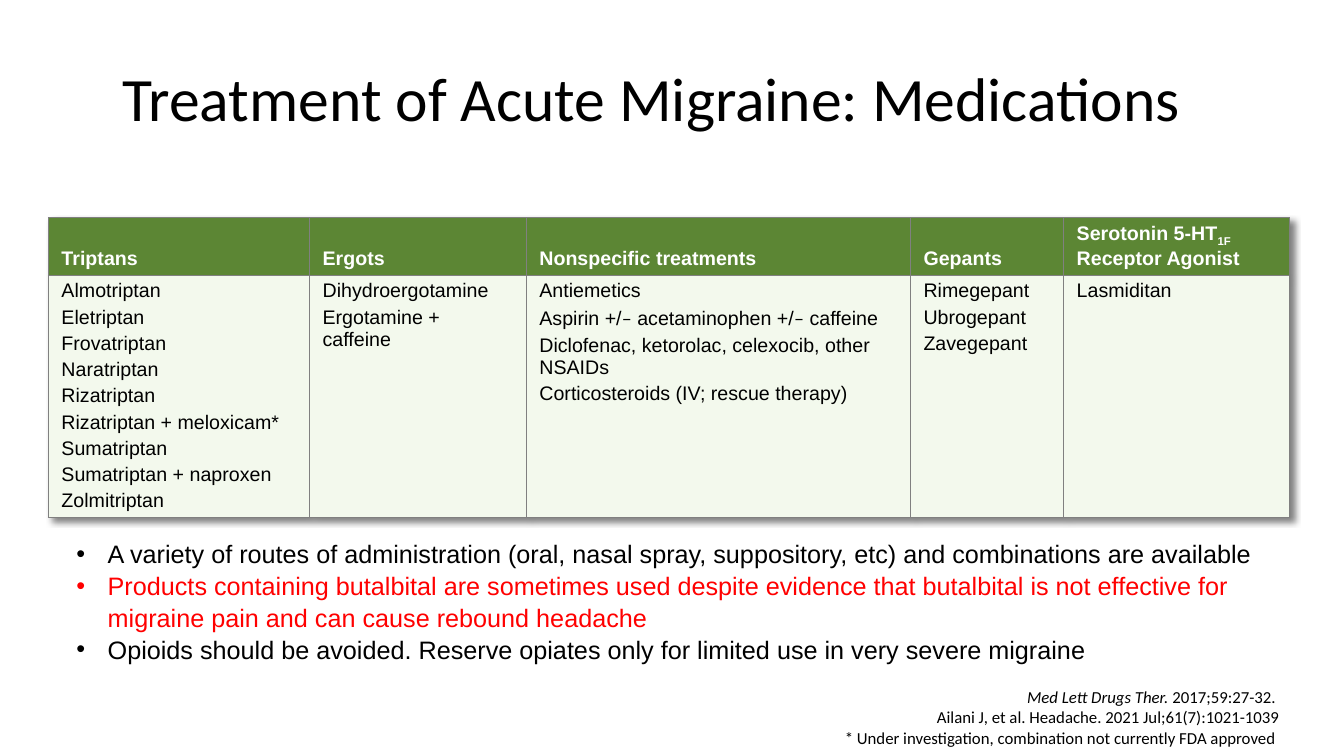
from lxml import etree
from pptx import Presentation
from pptx.dml.color import RGBColor
from pptx.enum.text import MSO_ANCHOR as ANCHOR, PP_ALIGN as ALIGN
from pptx.oxml import parse_xml
from pptx.oxml.ns import nsdecls, qn
from pptx.util import Inches, Pt

# Content: a paragraph is a list of (text, format) runs
TITLE = "Treatment of Acute Migraine: Medications"
DASH = ("‒", {"name": "Calibri"})
COLUMNS = [  # width, header runs, entries
    (2.59, [("Triptans", {})],
     ["Almotriptan", "Eletriptan", "Frovatriptan", "Naratriptan", "Rizatriptan",
      "Rizatriptan + meloxicam*", "Sumatriptan", "Sumatriptan + naproxen", "Zolmitriptan"]),
    (2.15, [("Ergots", {})], ["Dihydroergotamine", "Ergotamine + caffeine"]),
    (3.81, [("Nonspecific treatments", {})],
     ["Antiemetics",
      [("Aspirin +/", {}), DASH, (" acetaminophen +/", {}), DASH, (" caffeine", {})],
      "Diclofenac, ketorolac, celexocib, other NSAIDs",
      "Corticosteroids (IV; rescue therapy)"]),
    (1.52, [("Gepants", {})], ["Rimegepant", "Ubrogepant", "Zavegepant"]),
    (2.24, [("Serotonin 5-HT", {}), ("1F ", {"baseline": "-25000"}), ("Receptor Agonist", {})],
     ["Lasmiditan"]),
]
BULLETS = [
    ("A variety of routes of administration (oral, nasal spray, suppository, etc) "
     "and combinations are available", "000000"),
    ("Products containing butalbital are sometimes used despite evidence that butalbital "
     "is not effective for migraine pain and can cause rebound headache", "FF0000"),
    ("Opioids should be avoided. Reserve opiates only for limited use in very severe migraine",
     "000000"),
]
REFERENCES = [
    [("Med Lett Drugs Ther. ", {"italic": True}), ("2017;59:27-32. ", {})],
    "Ailani J, et al. Headache. 2021 Jul;61(7):1021-1039",
    "* Under investigation, combination not currently FDA approved ",
]
ROW_HEIGHTS = [0.57, 2.4]
HEAD = {"name": "Arial", "size": Pt(14), "bold": True, "color": "FFFFFF"}
BODY = {"name": "Arial", "size": Pt(14), "bold": False, "color": "000000"}
POINT = {"name": "Arial", "size": Pt(18)}
NOTE = {"name": "Calibri", "size": Pt(12), "color": "000000"}
HEADING = {"name": "Calibri", "size": Pt(44), "color": "000000"}


def rgb(value):
    return RGBColor.from_string(value)


def write(tf, paragraphs, base, **layout):
    """Fill a text frame; layout holds paragraph attributes."""
    for i, runs in enumerate(paragraphs):
        p = tf.paragraphs[0] if i == 0 else tf.add_paragraph()
        for key, value in layout.items():
            setattr(p, key, value)
        for text, extra in [(runs, {})] if isinstance(runs, str) else runs:
            r = p.add_run()
            r.text = text
            for key, value in {**base, **extra}.items():
                if key == "color":
                    r.font.color.rgb = rgb(value)
                elif key == "baseline":
                    r._r.get_or_add_rPr().set("baseline", value)
                else:
                    setattr(r.font, key, value)


def style_cell(cell, fill):
    cell.margin_left = cell.margin_right = Inches(0.13)
    cell.margin_top = cell.margin_bottom = Inches(0.05)
    tcPr = cell._tc.get_or_add_tcPr()
    for side in ("lnL", "lnR", "lnT", "lnB"):
        tcPr.append(parse_xml(
            f'<a:{side} {nsdecls("a")} w="12700"><a:solidFill>'
            f'<a:srgbClr val="808080"/></a:solidFill></a:{side}>'))
    cell.fill.solid()
    cell.fill.fore_color.rgb = rgb(fill)


def add_text(slide, box):
    tf = slide.shapes.add_textbox(*map(Inches, box)).text_frame
    tf.word_wrap = True
    return tf


prs = Presentation()
prs.slide_width, prs.slide_height = Inches(13.33), Inches(7.5)
slide = prs.slides.add_slide(prs.slide_layouts[5])

# Title
title = slide.shapes.title
title.left, title.top, title.width, title.height = map(Inches, (0.66, 0.63, 11.61, 0.54))
title.text_frame.vertical_anchor = ANCHOR.TOP
write(title.text_frame, [TITLE], HEADING, alignment=ALIGN.CENTER, line_spacing=0.9)

# Medication table with a soft shadow
table_width = sum(width for width, _, _ in COLUMNS)
table = slide.shapes.add_table(
    2, len(COLUMNS), *map(Inches, (0.48, 2.16, table_width, sum(ROW_HEIGHTS)))).table
table.horz_banding = False
table._tbl.tblPr.insert(0, parse_xml(
    f'<a:effectLst {nsdecls("a")}><a:outerShdw blurRad="50800" dist="50800" dir="2700000">'
    '<a:srgbClr val="000000"><a:alpha val="50000"/></a:srgbClr></a:outerShdw></a:effectLst>'))
for row, height in zip(table.rows, ROW_HEIGHTS):
    row.height = Inches(height)
for col, (width, header, entries) in enumerate(COLUMNS):
    table.columns[col].width = Inches(width)
    head, body = table.cell(0, col), table.cell(1, col)
    style_cell(head, "5C8634")
    style_cell(body, "F3F9ED")
    head.vertical_anchor = ANCHOR.BOTTOM
    write(head.text_frame, [header], HEAD)
    write(body.text_frame, entries, BODY, space_after=Pt(3))

# References
tf = add_text(slide, (1.02, 6.93, 11.77, 0.37))
tf.vertical_anchor = ANCHOR.MIDDLE
write(tf, REFERENCES, NOTE, alignment=ALIGN.RIGHT)

# Bullet points
tf = add_text(slide, (0.66, 5.28, 11.95, 1.31))
write(tf, [[(text, {"color": color})] for text, color in BULLETS], POINT, line_spacing=1.05)
for p in tf.paragraphs:
    pPr = p._p.get_or_add_pPr()
    pPr.set("marL", str(Inches(0.31)))
    pPr.set("indent", str(-Inches(0.31)))
    etree.SubElement(pPr, qn("a:buFont")).set("typeface", "Arial")
    etree.SubElement(pPr, qn("a:buChar")).set("char", "•")

prs.save("out.pptx")
